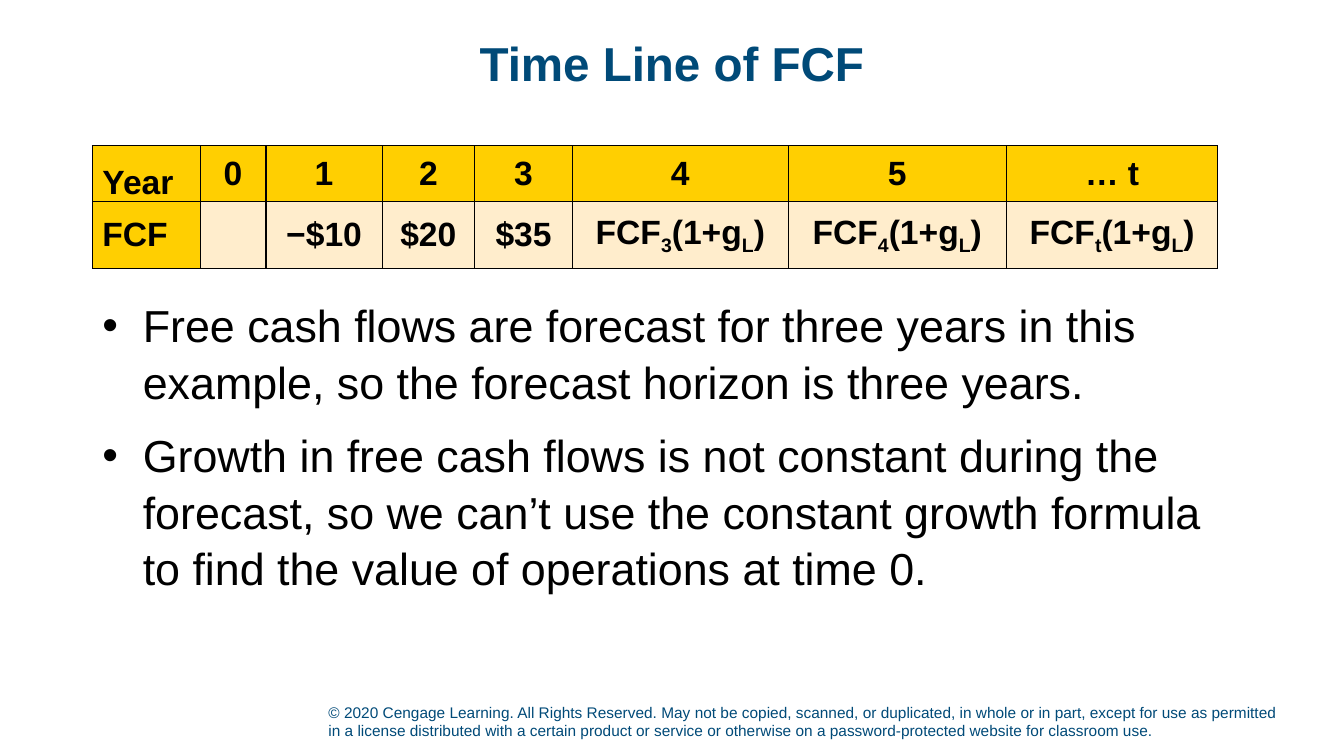
from dataclasses import dataclass

from lxml.etree import SubElement
from pptx import Presentation
from pptx.dml.color import RGBColor as Color
from pptx.enum.text import MSO_ANCHOR as Anchor, MSO_AUTO_SIZE as AutoSize, PP_ALIGN as Align
from pptx.oxml.ns import qn
from pptx.util import Pt


@dataclass(frozen=True)
class Theme:
    face: str = "Arial"
    navy: str = "004A78"
    ink: str = "000000"
    gold: str = "FFCF01"
    cream: str = "FFEDCC"
    title_size: int = 34
    body_size: int = 32
    table_size: int = 24
    footer_size: int = 11


class SlideBuilder:
    def __init__(self, deck, theme):
        self.theme = theme
        self.page = deck.slides.add_slide(deck.slide_layouts[1])

    def style(self, para, size, color, bold=False):
        font = para.font
        font.name, font.size, font.bold = self.theme.face, Pt(size), bold
        font.color.rgb = Color.from_string(color)

    def place(self, box, left, top, width, height, anchor):
        box.left, box.top, box.width, box.height = map(Pt, (left, top, width, height))
        frame = box.text_frame
        frame.word_wrap, frame.auto_size = True, AutoSize.NONE
        frame.vertical_anchor = anchor
        return frame

    def title(self, text, *bounds):
        frame = self.place(self.page.shapes.title, *bounds, Anchor.MIDDLE)
        para = frame.paragraphs[0]
        para.text, para.alignment, para.line_spacing = text, Align.CENTER, 0.95
        self.style(para, self.theme.title_size, self.theme.navy, bold=True)

    def bullets(self, items, *bounds):
        frame = self.place(self.page.placeholders[1], *bounds, Anchor.TOP)
        for index, item in enumerate(items):
            para = frame.add_paragraph() if index else frame.paragraphs[0]
            para.text, para.line_spacing = item, 1.05
            para.space_before, para.space_after = Pt(6 if index else 0), Pt(6)
            props = para._p.get_or_add_pPr()
            props.set("marL", str(Pt(28.8)))
            props.set("indent", str(Pt(-28.8)))
            self.style(para, self.theme.body_size, self.theme.ink)

    def footer(self, text, *bounds):
        box = self.page.shapes.add_textbox(*map(Pt, bounds))
        para = self.place(box, *bounds, Anchor.BOTTOM).paragraphs[0]
        para.text = text
        self.style(para, self.theme.footer_size, self.theme.navy)

    def table(self, rows, left, top, widths, heights):
        grid = self.page.shapes.add_table(
            len(rows), len(widths), Pt(left), Pt(top), Pt(sum(widths)), Pt(sum(heights))
        ).table
        for column, width in zip(grid.columns, widths):
            column.width = Pt(width)
        for r, (texts, height) in enumerate(zip(rows, heights)):
            grid.rows[r].height = Pt(height)
            for c, text in enumerate(texts):
                self.cell(grid.cell(r, c), text, is_header=r == 0 or c == 0, is_label=c == 0)
        grid.cell(0, 0).vertical_anchor = Anchor.BOTTOM

    def cell(self, cell, text, is_header, is_label):
        self.borders(cell)
        cell.fill.solid()
        fill = self.theme.gold if is_header else self.theme.cream
        cell.fill.fore_color.rgb = Color.from_string(fill)
        cell.margin_left = cell.margin_right = Pt(7.2)
        cell.margin_top = cell.margin_bottom = 0
        cell.vertical_anchor = Anchor.MIDDLE
        para = cell.text_frame.paragraphs[0]
        para.alignment = Align.LEFT if is_label else Align.CENTER
        self.style(para, self.theme.table_size, self.theme.ink, bold=True)
        # An underscore turns the next character into a subscript
        plain, *marked = text.split("_")
        self.span(para, plain)
        for part in marked:
            self.span(para, part[0], subscript=True)
            self.span(para, part[1:])

    def span(self, para, text, subscript=False):
        if text:
            span = para.add_run()
            span.text = text
            if subscript:
                span._r.get_or_add_rPr().set("baseline", "-25000")

    def borders(self, cell):
        props = cell._tc.get_or_add_tcPr()
        for side in ("lnL", "lnR", "lnT", "lnB"):
            line = SubElement(props, qn(f"a:{side}"), w=str(Pt(1)))
            fill = SubElement(line, qn("a:solidFill"))
            SubElement(fill, qn("a:srgbClr"), val=self.theme.ink)


def main():
    deck = Presentation()
    deck.slide_width, deck.slide_height = Pt(960), Pt(540)
    slide = SlideBuilder(deck, Theme())

    # Heading
    slide.title("Time Line of FCF", 66, 10.8, 828, 72)

    # Cash flow time line
    slide.table(
        [
            ["Year", "0", "1", "2", "3", "4", "5", "… t"],
            ["FCF", "", "−$10", "$20", "$35"] + [f"FCF_{year}(1+g_L)" for year in "34t"],
        ],
        66, 104,
        widths=[77, 47, 83, 66, 70, 154, 156, 151],
        heights=[40, 48],
    )

    # Explanation
    slide.bullets(
        [
            "Free cash flows are forecast for three years in this example, "
            "so the forecast horizon is three years.",
            "Growth in free cash flows is not constant during the forecast, so we can’t use "
            "the constant growth formula to find the value of operations at time 0.",
        ],
        66, 207.5, 828, 230,
    )

    # Copyright line
    slide.footer(
        "© 2020 Cengage Learning. All Rights Reserved. May not be copied, scanned, or "
        "duplicated, in whole or in part, except for use as permitted in a license "
        "distributed with a certain product or service or otherwise on a "
        "password-protected website for classroom use.",
        227.5, 496, 693.5, 36,
    )
    deck.save("out.pptx")


if __name__ == "__main__":
    main()
